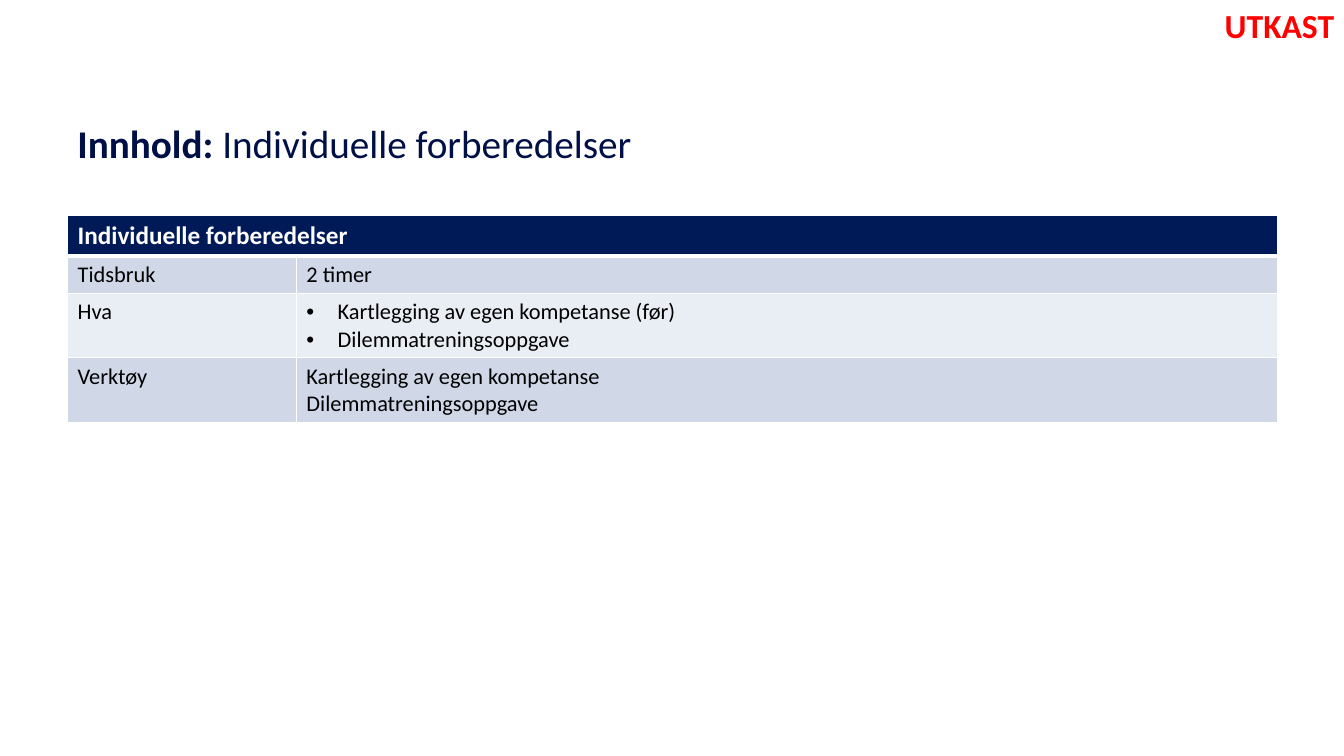
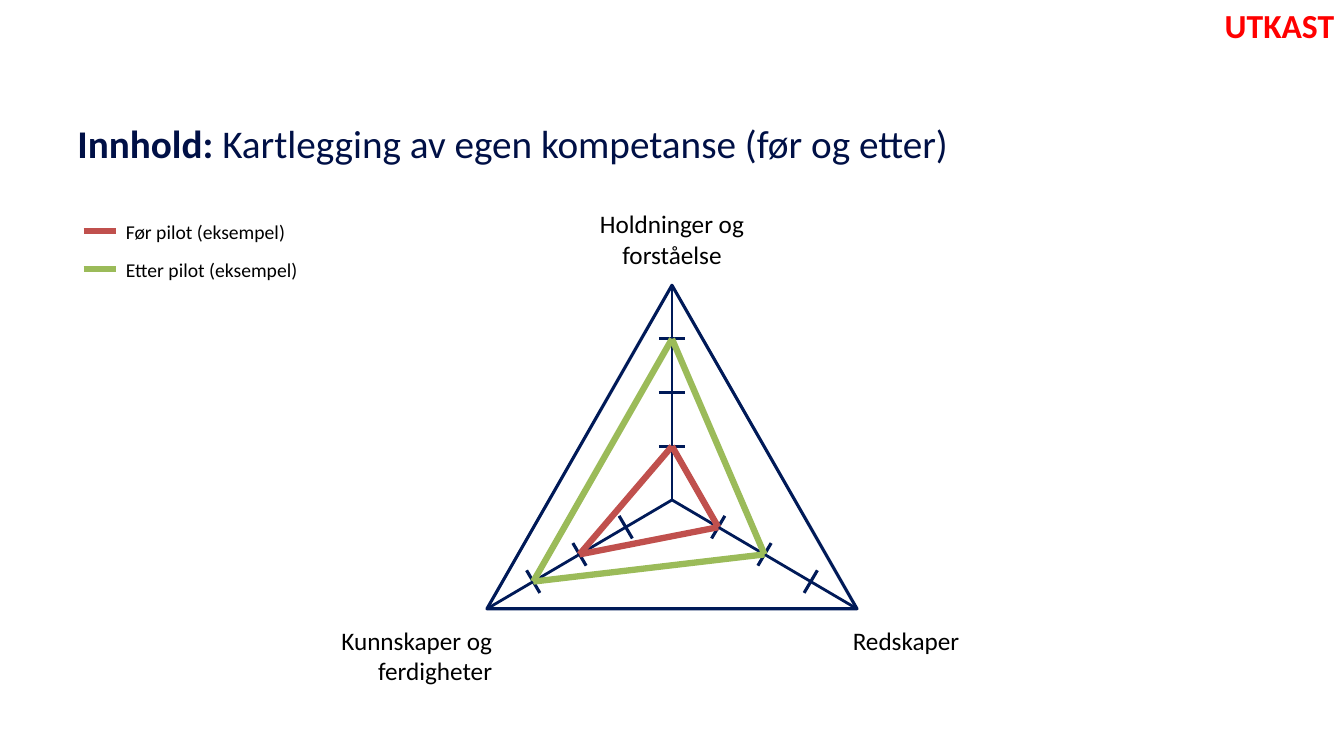
from dataclasses import dataclass
from math import hypot
from typing import NamedTuple

from lxml import etree
from pptx import Presentation
from pptx.dml.color import RGBColor
from pptx.enum.shapes import MSO_CONNECTOR, MSO_SHAPE
from pptx.enum.text import MSO_ANCHOR, MSO_AUTO_SIZE, PP_ALIGN
from pptx.oxml.ns import qn
from pptx.presentation import Presentation as Deck
from pptx.slide import Slide
from pptx.table import _Cell
from pptx.text.text import TextFrame, _Paragraph
from pptx.util import Inches, Pt

STRAIGHT = MSO_CONNECTOR.STRAIGHT
TRIANGLE = MSO_SHAPE.ISOSCELES_TRIANGLE
LEFT, CENTER, RIGHT = PP_ALIGN.LEFT, PP_ALIGN.CENTER, PP_ALIGN.RIGHT
TOP, MIDDLE = MSO_ANCHOR.TOP, MSO_ANCHOR.MIDDLE
FIT_SHAPE = MSO_AUTO_SIZE.SHAPE_TO_FIT_TEXT

FONT = "Calibri"
WHITE = RGBColor(0xFF, 0xFF, 0xFF)
BLACK = RGBColor(0x00, 0x00, 0x00)
TITLE_NAVY = RGBColor(0x00, 0x10, 0x46)
NAVY = RGBColor(0x00, 0x1A, 0x58)
RED = RGBColor(0xFF, 0x00, 0x00)
BRICK = RGBColor(0xC0, 0x50, 0x4D)
GREEN = RGBColor(0x9B, 0xBB, 0x59)
BAND_DARK = RGBColor(0xD0, 0xD8, 0xE8)
BAND_LIGHT = RGBColor(0xE9, 0xED, 0xF4)


class Point(NamedTuple):
    x: float
    y: float


class Box(NamedTuple):
    left: float
    top: float
    width: float
    height: float


@dataclass(frozen=True)
class Label:
    lines: list[str]
    box: Box
    align: PP_ALIGN


@dataclass(frozen=True)
class Series:
    name: str
    color: RGBColor
    scores: tuple[int, int, int]
    legend_y: float


@dataclass(frozen=True)
class TableRow:
    label: str
    lines: list[str]
    height: float
    bulleted: bool = False


TITLE_BOX = Box(0.67, 0.8, 12, 1.24)
DRAFT_BOX = Box(12.04, 0, 1.3, 0.5)
TABLE_LEFT, TABLE_TOP = 0.67, 2.14
COLUMN_WIDTHS = (2.27, 9.73)
HEADER_HEIGHT = 0.4
ROWS = [
    TableRow("Tidsbruk", ["2 timer"], 0.37),
    TableRow("Hva", ["Kartlegging av egen kompetanse (før)", "Dilemmatreningsoppgave"], 0.64, True),
    TableRow("Verktøy", ["Kartlegging av egen kompetanse", "Dilemmatreningsoppgave"], 0.64),
]

TRIANGLE_BOX = Box(4.83, 2.83, 3.67, 3.21)
BASE_Y = TRIANGLE_BOX.top + TRIANGLE_BOX.height
CENTRE = Point(TRIANGLE_BOX.left + TRIANGLE_BOX.width / 2, 4.96)
CORNERS = (
    Point(CENTRE.x, TRIANGLE_BOX.top),
    Point(TRIANGLE_BOX.left + TRIANGLE_BOX.width, BASE_Y),
    Point(TRIANGLE_BOX.left, BASE_Y),
)
AXIS_STEPS = 4
TICK_HALF = 0.13
LABELS = [
    Label(["Holdninger og", "forståelse"], Box(5.81, 2.02, 1.71, 0.71), CENTER),
    Label(["Kunnskaper og", "ferdigheter"], Box(3.26, 6.15, 1.72, 0.71), RIGHT),
    Label(["Redskaper"], Box(8.36, 6.15, 1.27, 0.4), LEFT),
]
SERIES = [
    Series("Før pilot (eksempel)", BRICK, (1, 1, 2), 2.29),
    Series("Etter pilot (eksempel)", GREEN, (3, 2, 3), 2.67),
]


def add_bullet(paragraph: _Paragraph) -> None:
    properties = paragraph._p.get_or_add_pPr()
    properties.set("marL", str(Inches(0.31)))
    properties.set("indent", str(-Inches(0.31)))
    etree.SubElement(properties, qn("a:buFont")).set("typeface", "Arial")
    etree.SubElement(properties, qn("a:buChar")).set("char", "•")


def write_text(frame: TextFrame, lines: list[str], *, size: float, color: RGBColor = BLACK,
               bold: bool = False, align: PP_ALIGN = LEFT, bulleted: bool = False,
               lead: str = "") -> None:
    for index, line in enumerate(lines):
        paragraph = frame.paragraphs[0] if index == 0 else frame.add_paragraph()
        paragraph.alignment = align
        if bulleted:
            add_bullet(paragraph)
        for text, is_bold in ((lead, True), (line, bold)):
            if text:
                run = paragraph.add_run()
                run.text = text
                run.font.name = FONT
                run.font.size = Pt(size)
                run.font.bold = is_bold
                run.font.color.rgb = color


def add_text(slide: Slide, box: Box, lines: list[str], *, anchor: MSO_ANCHOR = TOP,
             wrap: bool = False, **text_format) -> None:
    frame = slide.shapes.add_textbox(*map(Inches, box)).text_frame
    frame.word_wrap = wrap
    frame.vertical_anchor = anchor
    if not wrap:
        frame.auto_size = FIT_SHAPE
    write_text(frame, lines, **text_format)


def add_line(slide: Slide, start: Point, end: Point, color: RGBColor, width: float) -> None:
    line = slide.shapes.add_connector(STRAIGHT, *map(Inches, (*start, *end)))
    line.line.color.rgb = color
    line.line.width = Pt(width)
    etree.SubElement(line._element.spPr, qn("a:effectLst"))


def add_content_slide(presentation: Deck, title: str) -> Slide:
    slide = presentation.slides.add_slide(presentation.slide_layouts[6])
    add_text(slide, TITLE_BOX, [title], lead="Innhold: ", size=28, color=TITLE_NAVY,
             anchor=MIDDLE, wrap=True)
    add_text(slide, DRAFT_BOX, ["UTKAST"], size=24, color=RED, bold=True, align=CENTER)
    return slide


def set_borders(cell: _Cell, top: float = 1, bottom: float = 1) -> None:
    properties = cell._tc.get_or_add_tcPr()
    for index, (side, width) in enumerate((("L", 1), ("R", 1), ("T", top), ("B", bottom))):
        border = etree.Element(qn(f"a:ln{side}"), w=str(Pt(width)))
        fill = etree.SubElement(border, qn("a:solidFill"))
        etree.SubElement(fill, qn("a:srgbClr")).set("val", str(WHITE))
        properties.insert(index, border)


def fill_cell(cell: _Cell, fill: RGBColor, lines: list[str], *, top: float = 1,
              bottom: float = 1, **text_format) -> None:
    cell.fill.solid()
    cell.fill.fore_color.rgb = fill
    set_borders(cell, top, bottom)
    write_text(cell.text_frame, lines, **text_format)


def add_preparation_table(slide: Slide) -> None:
    heights = [HEADER_HEIGHT, *(row.height for row in ROWS)]
    box = Box(TABLE_LEFT, TABLE_TOP, sum(COLUMN_WIDTHS), sum(heights))
    table = slide.shapes.add_table(len(heights), len(COLUMN_WIDTHS), *map(Inches, box)).table
    for column, width in zip(table.columns, COLUMN_WIDTHS):
        column.width = Inches(width)
    for row, height in zip(table.rows, heights):
        row.height = Inches(height)

    header = table.cell(0, 0)
    header.merge(table.cell(0, 1))
    fill_cell(header, NAVY, ["Individuelle forberedelser"], bottom=3, size=18, color=WHITE, bold=True)
    fill_cell(table.cell(0, 1), NAVY, [], bottom=3, size=18)
    for index, row in enumerate(ROWS, start=1):
        fill = BAND_DARK if index % 2 else BAND_LIGHT
        top = 3 if index == 1 else 1
        fill_cell(table.cell(index, 0), fill, [row.label], top=top, size=16)
        fill_cell(table.cell(index, 1), fill, row.lines, top=top, size=16, bulleted=row.bulleted)


def axis_point(corner: Point, score: int) -> Point:
    share = score / AXIS_STEPS
    return Point(CENTRE.x + (corner.x - CENTRE.x) * share, CENTRE.y + (corner.y - CENTRE.y) * share)


def add_axis(slide: Slide, corner: Point) -> None:
    add_line(slide, CENTRE, corner, NAVY, 2)
    length = hypot(corner.x - CENTRE.x, corner.y - CENTRE.y)
    across_x = -(corner.y - CENTRE.y) / length * TICK_HALF
    across_y = (corner.x - CENTRE.x) / length * TICK_HALF
    for score in range(1, AXIS_STEPS):
        tick = axis_point(corner, score)
        add_line(slide, Point(tick.x - across_x, tick.y - across_y),
                 Point(tick.x + across_x, tick.y + across_y), NAVY, 2.25)


def add_series(slide: Slide, series: Series) -> None:
    points = [axis_point(corner, score) for corner, score in zip(CORNERS, series.scores)]
    for start, end in zip(points, points[1:] + points[:1]):
        add_line(slide, start, end, series.color, 4.5)
    add_line(slide, Point(0.83, series.legend_y), Point(1.15, series.legend_y), series.color, 4.5)
    add_text(slide, Box(1.15, series.legend_y - 0.16, 1.9, 0.34), [series.name], size=14)


def add_competence_triangle(slide: Slide) -> None:
    triangle = slide.shapes.add_shape(TRIANGLE, *map(Inches, TRIANGLE_BOX))
    triangle.shadow.inherit = False
    triangle.fill.background()
    triangle.line.color.rgb = NAVY
    triangle.line.width = Pt(2.25)
    for corner in CORNERS:
        add_axis(slide, corner)
    for label in LABELS:
        add_text(slide, label.box, label.lines, size=18, align=label.align)
    for series in SERIES:
        add_series(slide, series)


def main() -> None:
    presentation = Presentation()
    presentation.slide_width = Inches(13.33)
    presentation.slide_height = Inches(7.5)
    add_preparation_table(add_content_slide(presentation, "Individuelle forberedelser"))
    add_competence_triangle(
        add_content_slide(presentation, "Kartlegging av egen kompetanse (før og etter)"))
    presentation.save("out.pptx")


if __name__ == "__main__":
    main()
